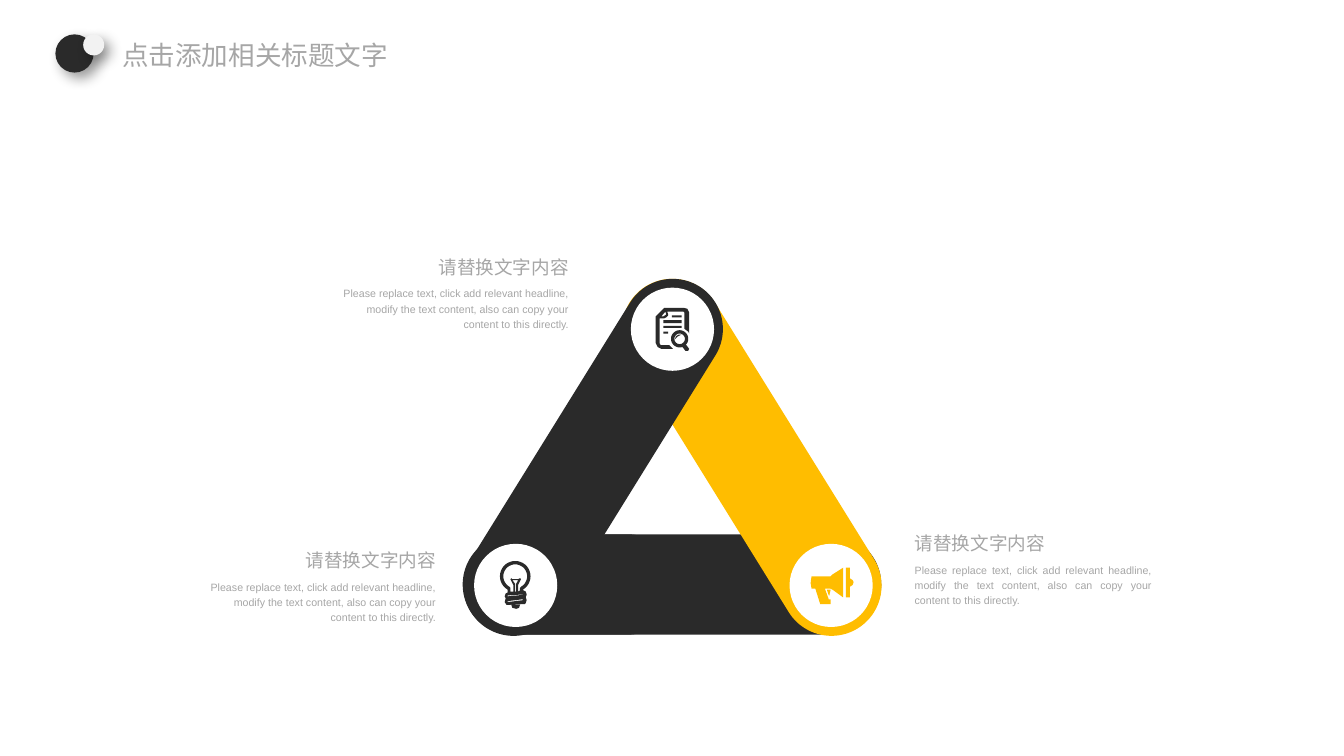
from math import cos, radians, sin

from pptx import Presentation
from pptx.dml.color import RGBColor
from pptx.enum.shapes import MSO_SHAPE
from pptx.enum.text import MSO_AUTO_SIZE, PP_ALIGN
from pptx.oxml import parse_xml
from pptx.oxml.ns import nsdecls, qn
from pptx.util import Inches, Pt

DARK, GOLD, WHITE, PALE, GRAY = "2A2A2A", "FFBD00", "FFFFFF", "F2F2F2", "A6A6A6"
HEAD = "请替换文字内容"
BODY = ("Please replace text, click add relevant headline, modify the text "
        "content, also can copy your content to this directly.")


def paint(shape, color):
    """Fill a shape with one flat colour, without line or shadow."""
    shape.shadow.inherit = False
    shape.fill.solid()
    shape.fill.fore_color.rgb = RGBColor.from_string(color)
    shape.line.fill.background()
    return shape


def draw(slide, kind, box, color):
    """Add a preset shape in a box given in inches."""
    return paint(slide.shapes.add_shape(kind, *map(Inches, box)), color)


def write(slide, box, text, size, align=PP_ALIGN.LEFT, space=None):
    """Add a wrapped text box with a single grey run."""
    area = slide.shapes.add_textbox(*map(Inches, box))
    frame = area.text_frame
    frame.word_wrap = True
    if space:
        frame.auto_size = MSO_AUTO_SIZE.SHAPE_TO_FIT_TEXT
    para = frame.paragraphs[0]
    para.alignment = align
    para.line_spacing = space
    run = para.add_run()
    run.text = text
    run.font.name = "Arial"
    run.font.size = Pt(size)
    run.font.color.rgb = RGBColor.from_string(GRAY)


def shade(shape):
    """Give a shape a soft shadow to the lower right."""
    shape._element.spPr.find(qn("a:effectLst")).append(parse_xml(
        f'<a:outerShdw {nsdecls("a")} blurRad="{Pt(10)}" dist="{Pt(6)}" '
        'dir="2700000" algn="tl" rotWithShape="0"><a:srgbClr val="000000">'
        '<a:alpha val="40000"/></a:srgbClr></a:outerShdw>'))


def arc(x, y, radius, start=0, end=350):
    """Return points along an arc, one every ten degrees."""
    return [(x + radius * cos(radians(a)), y + radius * sin(radians(a)))
            for a in range(start, end + 1, 10)]


def block(left, top, right, bottom):
    """Return the corners of a rectangle."""
    return [(left, top), (right, top), (right, bottom), (left, bottom)]


PAPER = [
    [(10, 0), (29, 0), (33, 1), (35, 5), (35, 27), (34, 25), (30, 22), (30, 5),
     (29, 4), (12, 4), (13, 7), (13, 8), (11, 10), (9, 11), (4, 11), (4, 37),
     (5, 39), (14, 39), (18, 43), (6, 43), (2, 41), (0, 37), (0, 9), (9, 0)],
    block(8, 25, 13, 27), block(8, 19, 27, 21),
    block(8, 13, 27, 16), block(17, 8, 27, 10),
    [(10, 4), (6, 9), (8, 9), (11, 7)],
    arc(25, 32.5, 9), arc(25, 32.5, 5.5),
    [(20, 33), (21, 30), (24, 28), (27, 28), (23, 30)],
    [(28, 41), (31, 45), (34, 45), (35, 43), (32, 39)],
]
BULB = [
    arc(16, 16, 16, 120, 420) + [
        (25, 31), (27, 32), (28, 35), (27, 38), (28, 41), (27, 44), (26, 45),
        (7, 46), (5, 43), (6, 39), (5, 37), (6, 34), (8, 33)],
    arc(16, 16, 12.5, 120, 420) + [
        (21, 28), (21, 31), (19, 32), (19, 25), (22, 19), (21, 18), (19, 19),
        (13, 19), (12, 18), (11, 19), (14, 25), (14, 32), (11, 32), (11, 28)],
    [(19, 20), (13, 20), (16, 24), (16, 32), (17, 32), (17, 24)],
    [(21, 46), (12, 46), (13, 49), (17, 50), (20, 49)],
    [(24, 40), (8, 42), (8, 43), (24, 41)],
    [(24, 35), (8, 36), (8, 37), (24, 35.5)],
]
HORN = [
    [(1, 9), (21, 9), (23, 7), (34, 0), (34, 31), (23, 23), (21, 22), (15, 22),
     (19, 33), (21, 33), (21, 38), (10, 38), (5, 22), (1, 22), (0, 16)],
    [(41, 11), (44, 13), (45, 15), (44, 18), (41, 20), (41, 31), (37, 31),
     (37, 0), (41, 0)],
    [(21, 23), (17, 23), (19, 29), (20, 29), (20, 27)],
]


def icon(slide, left, top, loops, color):
    """Draw closed loops, in hundredths of an inch, from a corner."""
    paths = [[(left * 1000 + x * 10, top * 1000 + y * 10) for x, y in loop]
             for loop in loops]
    pen = slide.shapes.build_freeform(*paths[0][0], scale=Inches(1) / 1000)
    pen.add_line_segments(paths[0][1:])
    for path in paths[1:]:
        pen.move_to(*path[0])
        pen.add_line_segments(path[1:])
    paint(pen.convert_to_shape(), color)


def badge(slide, left, top, shift, loops, color):
    """Place a white disc with an icon shifted from its corner."""
    draw(slide, MSO_SHAPE.OVAL, (left, top, 0.87, 0.87), WHITE)
    icon(slide, left + shift[0], top + shift[1], loops, color)


def ring(slide, left, top):
    """Build the triangle of three bars with a badge on each corner."""
    for x, y, width, turn, color in (
            (0.76, 2.69, 4.36, 0, DARK), (1.66, 1.36, 4.21, 58.2, GOLD),
            (0, 1.36, 4.21, -58.2, DARK), (0.74, 2.69, 2.25, 0, DARK)):
        bar = draw(slide, MSO_SHAPE.ROUNDED_RECTANGLE,
                   (left + x, top + y, width, 1.05), color)
        bar.adjustments[0] = 0.5
        bar.rotation = turn
    for x, y, shift, loops, color in (
            (2.5, 0.11, (0.26, 0.21), PAPER, DARK),
            (0.86, 2.79, (0.27, 0.18), BULB, DARK),
            (4.16, 2.79, (0.22, 0.25), HORN, GOLD)):
        badge(slide, left + x, top + y, shift, loops, color)


def note(slide, left, top, width, head, right):
    """Write a heading above its body text, aligned to one side."""
    side = PP_ALIGN.RIGHT if right else PP_ALIGN.LEFT
    start = left + width - head if right else left
    write(slide, (start, top, head, 0.36), HEAD, 14, side, 1.2)
    write(slide, (left, top + 0.35, width, 0.57), BODY, 8,
          side if right else PP_ALIGN.JUSTIFY, 1.2)


def title(slide, left, top):
    """Place the slide title beside its two shaded discs."""
    shade(draw(slide, MSO_SHAPE.OVAL, (left, top, 0.4, 0.4), DARK))
    write(slide, (left + 0.6, top, 3.35, 0.4), "点击添加相关标题文字", 20)
    shade(draw(slide, MSO_SHAPE.OVAL, (left + 0.29, top, 0.22, 0.22), PALE))


def main():
    """Build the slide and save it."""
    deck = Presentation()
    deck.slide_width, deck.slide_height = Inches(14.06), Inches(7.91)
    slide = deck.slides.add_slide(deck.slide_layouts[6])
    ring(slide, 4.1, 2.9)
    note(slide, 9.47, 5.47, 2.68, 1.61, False)
    note(slide, 3.46, 2.58, 2.59, 1.62, True)
    note(slide, 2.07, 5.65, 2.59, 1.79, True)
    title(slide, 0.58, 0.36)
    deck.save("out.pptx")


if __name__ == "__main__":
    main()
